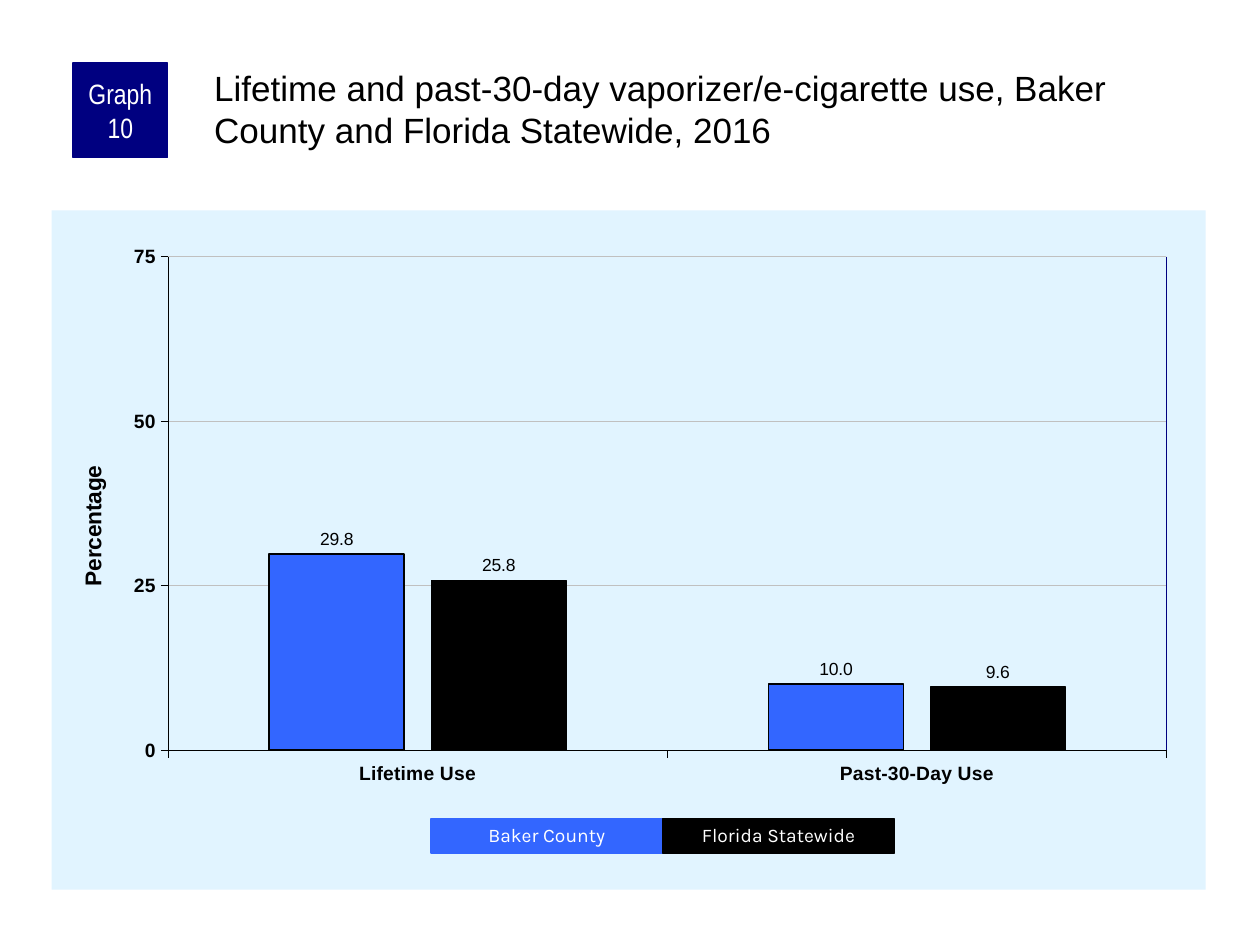
"""Build a slide comparing vaporizer use in Baker County and Florida Statewide."""
from pptx import Presentation, util as u
from pptx.chart.data import CategoryChartData
from pptx.dml.color import RGBColor
from pptx.enum import chart as ch, shapes, text
from pptx.oxml import parse_xml
from pptx.oxml.ns import nsdecls, qn

THEME = {
    "ink": RGBColor.from_string("000000"), "paper": RGBColor.from_string("FFFFFF"),
    "navy": RGBColor.from_string("000080"), "blue": RGBColor.from_string("3366FF"),
    "grid": RGBColor.from_string("C0C0C0"), "panel": "E1F4FF",
    "font": "Arial", "narrow": "Arial Narrow", "legend_font": "Karla",
    "title": 20, "badge": 16, "axis_title": 13, "axis": 11, "legend": 11, "label": 10,
}


def style(font, size, color, name=THEME["font"], bold=False):
    """Apply a type style to a font."""
    font.size, font.name, font.bold = u.Pt(size), name, bold
    font.color.rgb = color


def place(parent, index, **shares):
    """Give a chart part a manual layout in shares of the chart."""
    for old in parent.findall(qn("c:layout")):
        parent.remove(old)
    target = '<c:layoutTarget val="inner"/>' if "w" in shares else ""
    modes = "".join(f'<c:{key}Mode val="edge"/>' for key in "xy")
    values = "".join(f'<c:{key} val="{value}"/>' for key, value in shares.items())
    parent.insert(index, parse_xml(
        f'<c:layout {nsdecls("c")}><c:manualLayout>{target}{modes}{values}'
        '</c:manualLayout></c:layout>'))


deck = Presentation()
deck.slide_width, deck.slide_height = u.Inches(10), u.Inches(7.5)
page = deck.slides.add_slide(deck.slide_layouts[5])

title = page.shapes.title
title.left, title.top, title.width, title.height = map(u.Inches, (1.67, 0.5, 7.92, 0.83))
frame = title.text_frame
frame.text = "Lifetime and past-30-day vaporizer/e-cigarette use, Baker County and Florida Statewide, 2016"
frame.word_wrap, frame.auto_size = True, text.MSO_AUTO_SIZE.NONE
frame.vertical_anchor = text.MSO_ANCHOR.TOP
frame.margin_left = frame.margin_top = u.Inches(0.03)
frame.margin_right = frame.margin_bottom = 0
frame.paragraphs[0].alignment = text.PP_ALIGN.LEFT
style(frame.paragraphs[0].runs[0].font, THEME["title"], THEME["ink"])

left, top, width, height = map(u.Inches, (0.41, 1.67, 9.16, 5.39))
plot_area = {"x": 0.101, "y": 0.068, "w": 0.865, "h": 0.727}
data = CategoryChartData(number_format="0.0")
data.categories = ["Lifetime Use", "Past-30-Day Use"]
data.add_series("Series 1", (29.8, 10))
data.add_series("Series 2", (25.8, 9.6))
chart = page.shapes.add_chart(
    ch.XL_CHART_TYPE.COLUMN_CLUSTERED, left, top, width, height, data).chart
chart.has_legend = chart.has_title = False
style(chart.font, 11.5, THEME["ink"])
chart.element.find(qn("c:txPr")).addprevious(parse_xml(
    f'<c:spPr {nsdecls("c", "a")}><a:solidFill><a:srgbClr val="{THEME["panel"]}"/></a:solidFill>'
    '<a:ln><a:noFill/></a:ln></c:spPr>'))
place(chart.element.find(f'{qn("c:chart")}/{qn("c:plotArea")}'), 0, **plot_area)

bars = chart.plots[0]
bars.gap_width, bars.overlap, bars.vary_by_categories = 150, -20, False
for series, color, weight in zip(bars.series, (THEME["blue"], THEME["ink"]), (1, 0.75)):
    series.format.fill.solid()
    series.format.fill.fore_color.rgb = color
    series.format.line.color.rgb = THEME["ink"]
    series.format.line.width = u.Pt(weight)
    labels = series.data_labels
    labels.show_value = True
    labels.number_format, labels.number_format_is_linked = "0.0", False
    labels.position = ch.XL_LABEL_POSITION.OUTSIDE_END
    style(labels.font, THEME["label"], THEME["ink"])

for axis in (chart.category_axis, chart.value_axis):
    axis.major_tick_mark, axis.minor_tick_mark = ch.XL_TICK_MARK.OUTSIDE, ch.XL_TICK_MARK.NONE
    axis.format.line.color.rgb = THEME["ink"]
    axis.format.line.width = u.Pt(0.25)
    style(axis.tick_labels.font, THEME["axis"], THEME["ink"], bold=True)

scale = chart.value_axis
scale.minimum_scale, scale.maximum_scale, scale.major_unit = 0, 75, 25
scale.tick_labels.number_format, scale.tick_labels.number_format_is_linked = "0", False
scale.major_gridlines.format.line.color.rgb = THEME["grid"]
scale.major_gridlines.format.line.width = u.Pt(0.25)
caption = scale.axis_title.text_frame
caption.text = "Percentage"
style(caption.paragraphs[0].runs[0].font, THEME["axis_title"], THEME["ink"], bold=True)
place(scale.axis_title._element, 1, x=0.02, y=0.37)

edge_x = left + int(width * (plot_area["x"] + plot_area["w"]))
edge_top = top + int(height * plot_area["y"])
edge = page.shapes.add_connector(
    shapes.MSO_CONNECTOR.STRAIGHT, edge_x, edge_top,
    edge_x, edge_top + int(height * plot_area["h"]))
edge.line.color.rgb, edge.line.width = THEME["navy"], u.Pt(1)
edge._element.spPr.append(parse_xml(f'<a:effectLst {nsdecls("a")}/>'))

key_left, key_width = 3.42, 1.84
boxes = [("Graph 10", (0.58, 0.5, 0.75, 0.75), THEME["navy"], THEME["badge"], THEME["narrow"], 1)]
for column, (name, color) in enumerate(
        (("Baker County", THEME["blue"]), ("Florida Statewide", THEME["ink"]))):
    spot = (key_left + column * key_width, 6.5, key_width, 0.27)
    boxes.append((name, spot, color, THEME["legend"], THEME["legend_font"], 0.9))

for words, spot, color, size, font_name, spacing in boxes:
    box = page.shapes.add_shape(shapes.MSO_SHAPE.RECTANGLE, *map(u.Inches, spot))
    box.shadow.inherit = False
    box.fill.solid()
    box.fill.fore_color.rgb = box.line.color.rgb = color
    box.line.width = u.Pt(0.75)
    frame = box.text_frame
    frame.text, frame.word_wrap = words, True
    frame.vertical_anchor = text.MSO_ANCHOR.MIDDLE
    frame.margin_left = frame.margin_right = u.Inches(0.05)
    frame.margin_top = frame.margin_bottom = 0
    para = frame.paragraphs[0]
    para.alignment, para.line_spacing = text.PP_ALIGN.CENTER, spacing
    style(para.runs[0].font, size, THEME["paper"], font_name)

deck.save("out.pptx")
